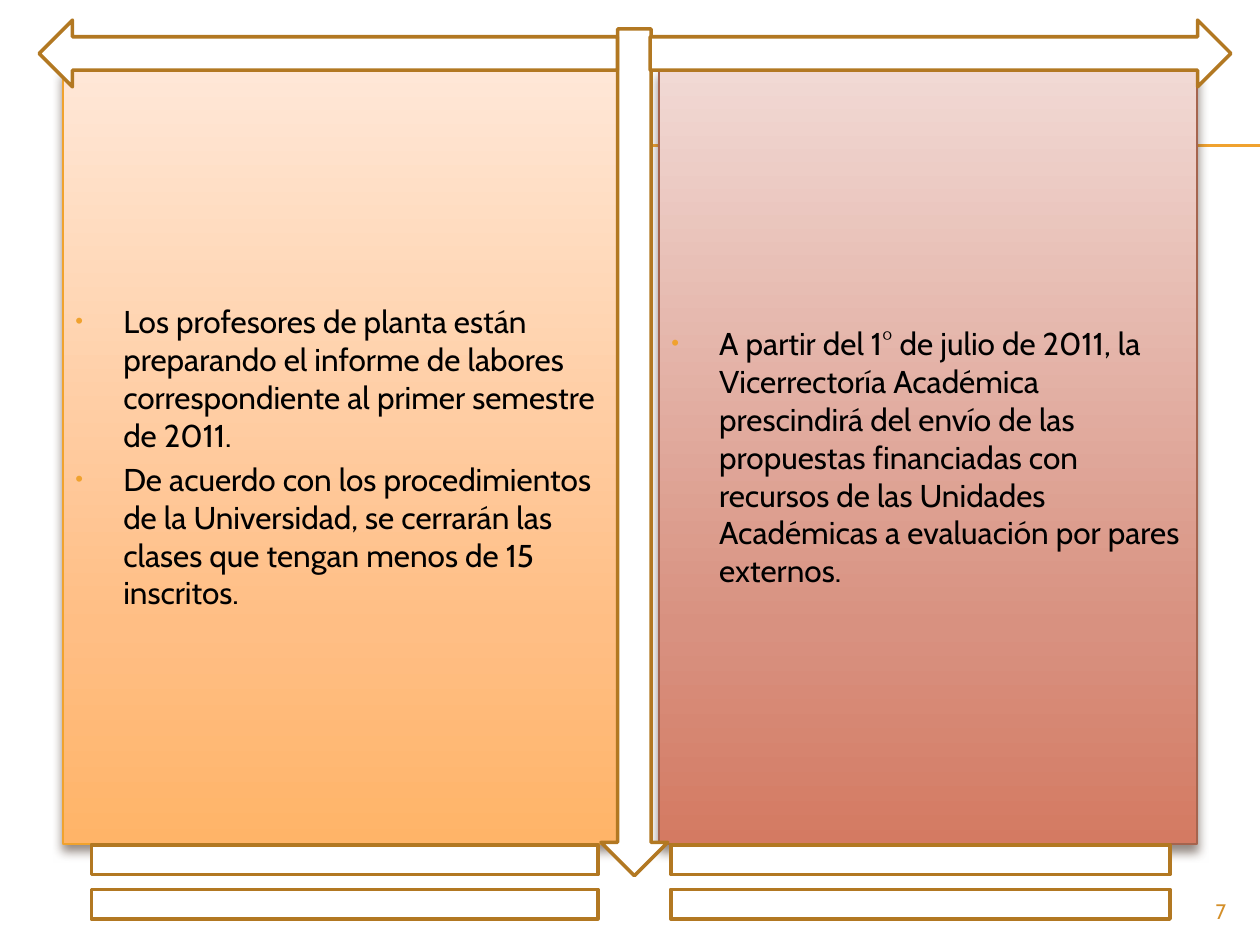
from pptx import Presentation
from pptx.dml.color import RGBColor
from pptx.enum.shapes import MSO_CONNECTOR, MSO_SHAPE
from pptx.enum.text import MSO_ANCHOR, PP_ALIGN
from pptx.oxml import parse_xml
from pptx.oxml.ns import nsdecls, qn
from pptx.util import Inches, Pt

STRAIGHT = MSO_CONNECTOR.STRAIGHT
RECTANGLE = MSO_SHAPE.RECTANGLE
DOWN, RIGHT, LEFT = MSO_SHAPE.DOWN_ARROW, MSO_SHAPE.RIGHT_ARROW, MSO_SHAPE.LEFT_ARROW
EQUAL = MSO_SHAPE.MATH_EQUAL
FONT = "Cabin"
AMBER, BROWN, WHITE, BLACK = "F0A22E", "B27822", "FFFFFF", "000000"
SHADOW = "4E3B30"

RULES = [1.15, 1.16]
PANELS = [
    {
        "place": (0.5, 0.55, 4.42, 6.15),
        "stops": [(0, "FFE7D7"), (72, "FFBE84"), (100, "FFB468")],
        "line": AMBER,
        "items": [
            "Los profesores de planta están preparando el informe de labores "
            "correspondiente al primer semestre de 2011.",
            "De acuerdo con los procedimientos de la Universidad, se cerrarán "
            "las clases que tengan menos de 15 inscritos.",
        ],
    },
    {
        "place": (5.23, 0.55, 4.27, 6.15),
        "stops": [(0, "F1D9D4"), (72, "D89180"), (100, "D47A62")],
        "line": "A5644E",
        "items": [
            "A partir del 1° de julio de 2011, la Vicerrectoría Académica "
            "prescindirá del envío de las propuestas financiadas con recursos "
            "de las Unidades Académicas a evaluación por pares externos.",
        ],
    },
]
FRAME = [
    (DOWN, (4.77, 0.23, 0.53, 6.72)),
    (RIGHT, (5.16, 0.16, 4.61, 0.53)),
    (LEFT, (0.31, 0.16, 4.59, 0.53)),
    (EQUAL, (0, 6.5, 5.47, 1)),
    (EQUAL, (4.61, 6.5, 5.39, 1)),
]
PAGE_NUMBER = ("7", (9, 7.08, 0.83, 0.27))


def rgb(value):
    return RGBColor.from_string(value)


def inches(place):
    return [Inches(length) for length in place]


def set_line(item, color, width):
    item.line.color.rgb = rgb(color)
    item.line.width = Pt(width)


def add_span(para, text, size, color):
    span = para.add_run()
    span.text = text
    span.font.color.rgb = rgb(color)
    for name, value in {"name": FONT, "size": Pt(size)}.items():
        setattr(span.font, name, value)


def add_rule(page, y):
    rule = page.shapes.add_connector(STRAIGHT, *inches((0.56, y, 10, y)))
    set_line(rule, AMBER, 0.75)
    rule._element.spPr.append(parse_xml(f'<a:effectLst {nsdecls("a")}/>'))


def add_outlined(page, kind, place, color, width):
    shape = page.shapes.add_shape(kind, *inches(place))
    shape.shadow.inherit = False
    set_line(shape, color, width)
    return shape


def fill_gradient(shape, stops):
    """Fill from top to bottom with (percent, colour) stops."""
    shape.fill.gradient()
    shape.fill.gradient_angle = 270
    stop_list = shape._element.spPr.find(qn("a:gradFill")).find(qn("a:gsLst"))
    for old in list(stop_list):
        stop_list.remove(old)
    for percent, color in stops:
        stop_list.append(parse_xml(
            f'<a:gs {nsdecls("a")} pos="{percent * 1000}"><a:srgbClr val="{color}"/></a:gs>'))


def drop_shadow(shape):
    shape._element.spPr.find(qn("a:effectLst")).append(parse_xml(
        f'<a:outerShdw {nsdecls("a")} blurRad="{Pt(6)}" dist="{Pt(4)}" dir="5400000" '
        f'rotWithShape="0"><a:srgbClr val="{SHADOW}"><a:alpha val="60000"/>'
        '</a:srgbClr></a:outerShdw>'))


def add_bullet(para):
    properties = para._p.get_or_add_pPr()
    indent = Inches(0.38)
    properties.set("marL", str(indent))
    properties.set("indent", str(-indent))
    for tag, content in (
        ("spcBef", '<a:spcPct val="20000"/>'),
        ("buClr", f'<a:srgbClr val="{AMBER}"/>'),
    ):
        properties.append(parse_xml(f'<a:{tag} {nsdecls("a")}>{content}</a:{tag}>'))
    for tag in ('buSzPct val="70000"', 'buFont typeface="Arial"', 'buChar char="•"'):
        properties.append(parse_xml(f'<a:{tag} {nsdecls("a")}/>'))


def add_panel(page, panel):
    shape = add_outlined(page, RECTANGLE, panel["place"], panel["line"], 0.79)
    fill_gradient(shape, panel["stops"])
    drop_shadow(shape)
    frame = shape.text_frame
    for name, value in {"word_wrap": True, "vertical_anchor": MSO_ANCHOR.MIDDLE}.items():
        setattr(frame, name, value)
    for index, text in enumerate(panel["items"]):
        para = frame.add_paragraph() if index else frame.paragraphs[0]
        para.alignment = PP_ALIGN.LEFT
        add_bullet(para)
        add_span(para, text, 18, BLACK)


def add_page_number(page, text, place):
    box = page.shapes.add_textbox(*inches(place))
    box.text_frame.word_wrap = True
    para = box.text_frame.paragraphs[0]
    para.alignment = PP_ALIGN.RIGHT
    add_span(para, text, 12, "D48F29")


def main():
    deck = Presentation()
    deck.slide_width, deck.slide_height = inches((10, 7.5))
    page = deck.slides.add_slide(deck.slide_layouts[6])
    for y in RULES:
        add_rule(page, y)
    for panel in PANELS:
        add_panel(page, panel)
    for kind, place in FRAME:
        shape = add_outlined(page, kind, place, BROWN, 2)
        shape.fill.solid()
        shape.fill.fore_color.rgb = rgb(WHITE)
    add_page_number(page, *PAGE_NUMBER)
    deck.save("out.pptx")


if __name__ == "__main__":
    main()
